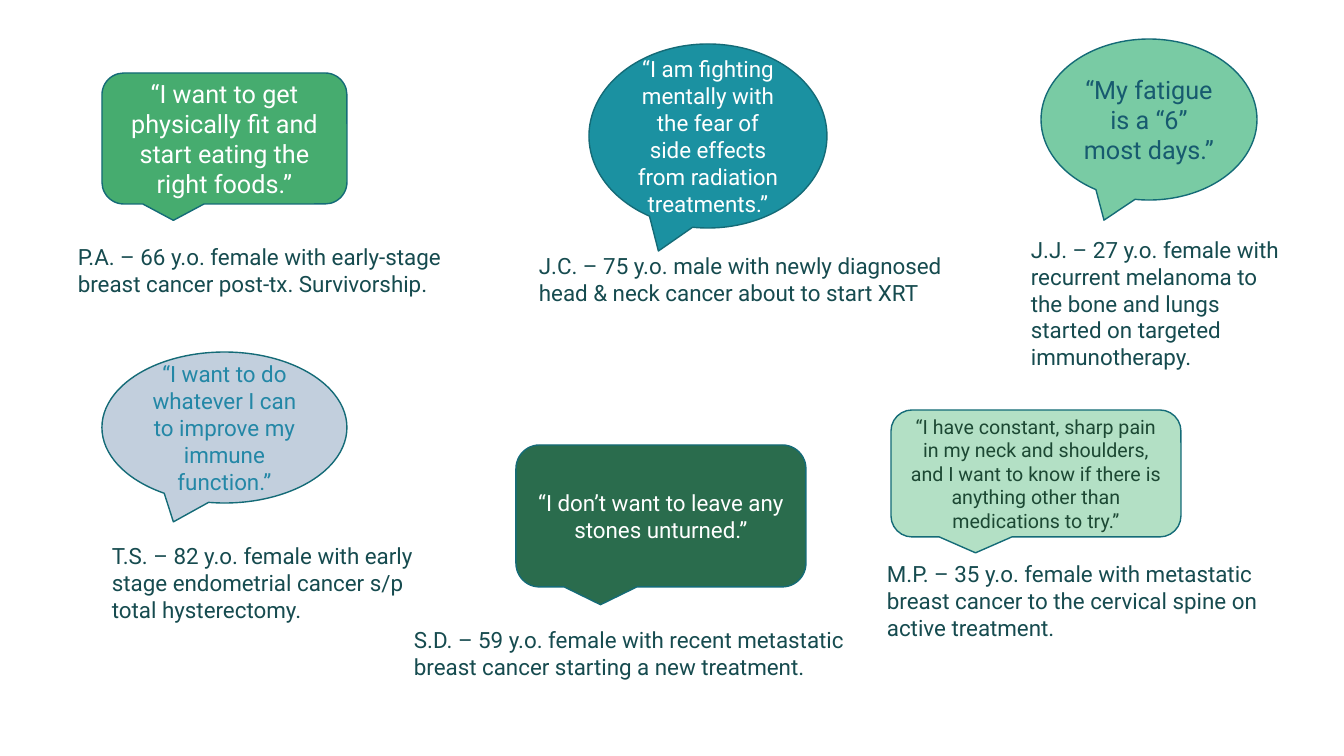
import pptx
import pptx.util
import pptx.dml.color
import pptx.enum.shapes
import pptx.enum.text

COLORS = {
    "white": "FFFFFF", "outline": "146B77", "caption": "164B4F",
    "teal": "1B91A1", "mint": "79CBA4", "petrol": "175A6F",
    "grey": "C2CFDD", "blue": "2387A6", "forest": "2A6C4D",
    "pale": "B3E0C5", "pine": "1C4833", "green": "46AC6F",
}
ELLIPSE = pptx.enum.shapes.MSO_SHAPE.OVAL_CALLOUT
ROUNDED = pptx.enum.shapes.MSO_SHAPE.ROUNDED_RECTANGULAR_CALLOUT

QUOTES = [
    (ELLIPSE, (589, 44, 238, 184), "teal", "white", 16,
     "“I am fighting mentally with the fear of side effects from radiation treatments.”"),
    (ELLIPSE, (1041, 39, 216, 161), "mint", "petrol", 18,
     "“My fatigue is a “6” most days.”"),
    (ELLIPSE, (102, 352, 245, 151), "grey", "blue", 16,
     "“I want to do whatever I can to improve my immune function.”"),
    (ROUNDED, (516, 445, 290, 142), "forest", "white", 16,
     "“I don’t want to leave any stones unturned.”"),
    (ROUNDED, (891, 410, 290, 127), "pale", "pine", 14,
     "“I have constant, sharp pain in my neck and shoulders, and I want to know "
     "if there is anything other than medications to try.”"),
    (ROUNDED, (102, 73, 245, 131), "green", "white", 18,
     "“I want to get physically fit and start eating the right foods.”"),
]

PATIENTS = [
    ((68, 238, 414, 64), False,
     "P.A. – 66 y.o. female with early-stage\nbreast cancer post-tx. Survivorship."),
    ((877, 555, 416, 92), False,
     "M.P. – 35 y.o. female with metastatic\nbreast cancer to the cervical spine on\nactive treatment."),
    ((529, 247, 445, 64), False,
     "J.C. – 75 y.o. male with newly diagnosed\nhead & neck cancer about to start XRT"),
    ((404, 621, 473, 64), False,
     "S.D. – 59 y.o. female with recent metastatic\nbreast cancer starting a new treatment."),
    ((1021, 231, 274, 146), True,
     "J.J. – 27 y.o. female with recurrent melanoma to the bone and lungs "
     "started on targeted immunotherapy."),
    ((102, 537, 343, 92), False,
     "T.S. – 82 y.o. female with early\nstage endometrial cancer s/p\ntotal hysterectomy."),
]


class Deck:
    """Holds the deck style and the current slide."""

    font = "Roboto"
    scale = 914400 / 100.8

    def __init__(self, width, height):
        self.prs = pptx.Presentation()
        self.prs.slide_width, self.prs.slide_height = self.emu(width, height)
        self.slide = self.prs.slides.add_slide(self.prs.slide_layouts[6])

    def emu(self, *lengths):
        return [pptx.util.Emu(round(px * self.scale)) for px in lengths]

    def color(self, name):
        return pptx.dml.color.RGBColor.from_string(COLORS[name])

    def set_text(self, tf, text, size, color, align):
        tf.text = text
        for p in tf.paragraphs:
            p.alignment = align
            for r in p.runs:
                r.font.name = self.font
                r.font.size = pptx.util.Pt(size)
                r.font.color.rgb = self.color(color)

    def quote(self, kind, box, fill, color, size, text):
        sp = self.slide.shapes.add_shape(kind, *self.emu(*box))
        sp.shadow.inherit = False
        sp.fill.solid()
        sp.fill.fore_color.rgb = self.color(fill)
        sp.line.color.rgb = self.color("outline")
        sp.line.width = pptx.util.Pt(1)
        tf = sp.text_frame
        tf.word_wrap = True
        tf.vertical_anchor = pptx.enum.text.MSO_ANCHOR.MIDDLE
        self.set_text(tf, text, size, color, pptx.enum.text.PP_ALIGN.CENTER)

    def patient(self, box, wrap, text):
        tf = self.slide.shapes.add_textbox(*self.emu(*box)).text_frame
        tf.word_wrap = wrap
        tf.auto_size = pptx.enum.text.MSO_AUTO_SIZE.SHAPE_TO_FIT_TEXT
        self.set_text(tf, text, 16, "caption", pptx.enum.text.PP_ALIGN.LEFT)


def main():
    deck = Deck(1344, 756)
    for quote in QUOTES:
        deck.quote(*quote)
    for patient in PATIENTS:
        deck.patient(*patient)
    deck.prs.save("out.pptx")


if __name__ == "__main__":
    main()
